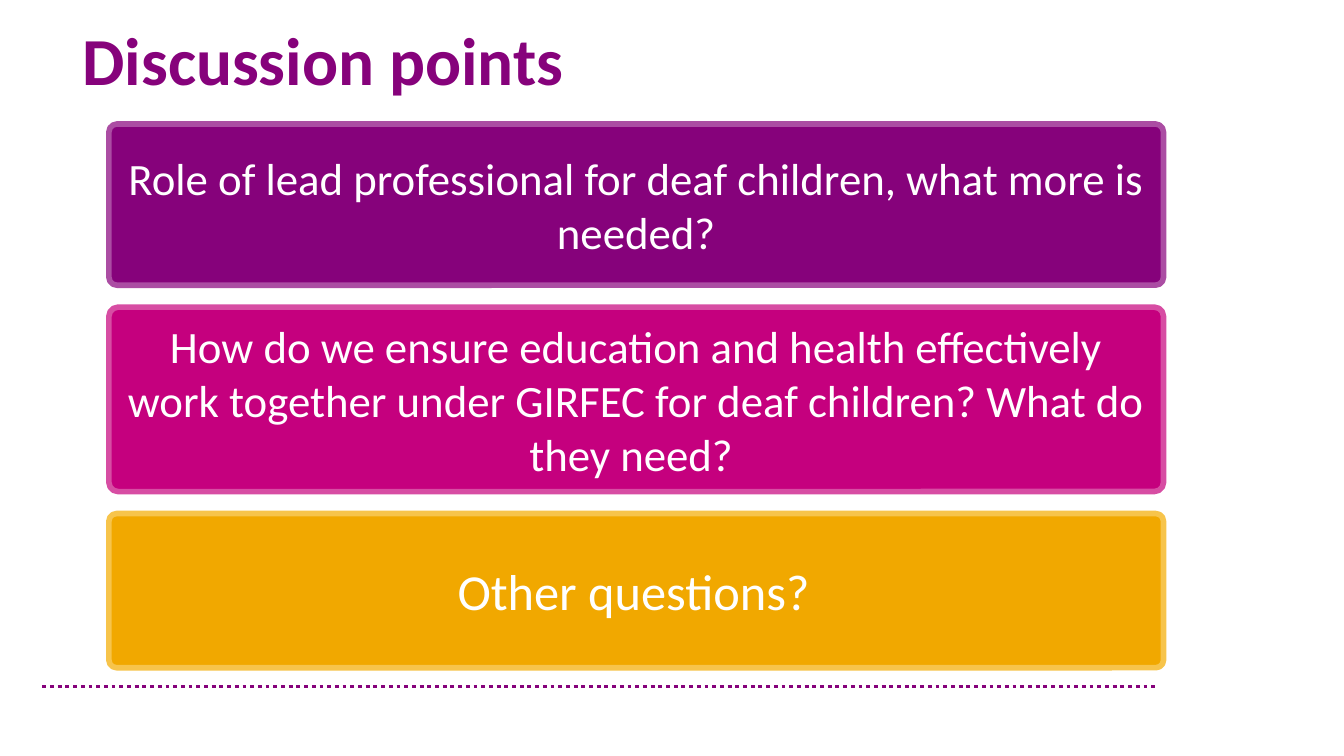
from lxml.etree import SubElement
from pptx import Presentation
from pptx.dml.color import RGBColor
from pptx.enum.dml import MSO_LINE
from pptx.enum.shapes import MSO_CONNECTOR, MSO_SHAPE
from pptx.enum.text import MSO_ANCHOR, PP_ALIGN
from pptx.oxml.ns import qn
from pptx.util import Inches, Pt

# Grid of 100 columns by 100 rows
WIDE, HIGH = 13.33, 7.5
PURPLE, PINK, GOLD, WHITE = "86027B", "C5007E", "F1A800", "FFFFFF"

# Rows high, fill, edge, runs of (text, size)
CARDS = [
    (21.33, PURPLE, "AB4DA3",
     [("Role of lead professional for deaf children, what more is needed?", 32)]),
    (24.4, PINK, "D74DA3",
     [("How do we ensure education and health effectively work together "
       "under GIRFEC for deaf children? What do they need? ", 32)]),
    (20.4, GOLD, "F7C44B", [("Other questions?", 36), (" ", 16)]),
]


def col(count):
    return Inches(WIDE * count / 100)


def row(count):
    return Inches(HIGH * count / 100)


def color(code):
    return RGBColor.from_string(code)


def style(item, form):
    for name, value in form.items():
        setattr(item, name, value)


def write(para, text, size, code, bold=False):
    run = para.add_run()
    run.text = text
    style(run.font, {"name": "Calibri", "size": Pt(size), "bold": bold})
    run.font.color.rgb = color(code)


def add_title(slide, text):
    box = slide.shapes.add_textbox(col(5.4), row(2.93), col(91.75), row(10.67))
    box.text_frame.word_wrap = True
    para = box.text_frame.paragraphs[0]
    para.line_spacing = 0.9
    write(para, text, 48, PURPLE, True)


def add_card(slide, top, high, fill, edge, runs):
    card = slide.shapes.add_shape(
        MSO_SHAPE.ROUNDED_RECTANGLE, col(8.1), row(top), col(78.47), row(high))
    card.adjustments[0] = 0.05
    card.shadow.inherit = False
    card.fill.solid()
    card.fill.fore_color.rgb = color(fill)
    card.line.color.rgb = color(edge)
    card.line.width = Pt(4)
    style(card.text_frame,
          {"word_wrap": True, "vertical_anchor": MSO_ANCHOR.MIDDLE})
    para = card.text_frame.paragraphs[0]
    para.alignment = PP_ALIGN.CENTER
    for text, size in runs:
        write(para, text, size, WHITE)


def add_rule(slide, left, right, level):
    rule = slide.shapes.add_connector(
        MSO_CONNECTOR.STRAIGHT, col(left), row(level), col(right), row(level))
    rule.line.color.rgb = color(PURPLE)
    style(rule.line, {"width": Pt(2.75), "dash_style": MSO_LINE.ROUND_DOT})
    SubElement(rule._element.spPr, qn("a:effectLst"))


def main():
    deck = Presentation()
    style(deck, {"slide_width": Inches(WIDE), "slide_height": Inches(HIGH)})
    slide = deck.slides.add_slide(deck.slide_layouts[6])

    # Dotted footer rule
    add_rule(slide, 3.15, 86.05, 90.8)

    # Stack of cards with equal gaps
    top, gap = 16.4, 2.9
    for high, fill, edge, runs in CARDS:
        add_card(slide, top, high, fill, edge, runs)
        top += high + gap

    # Heading
    add_title(slide, "Discussion points")
    deck.save("out.pptx")


if __name__ == "__main__":
    main()
